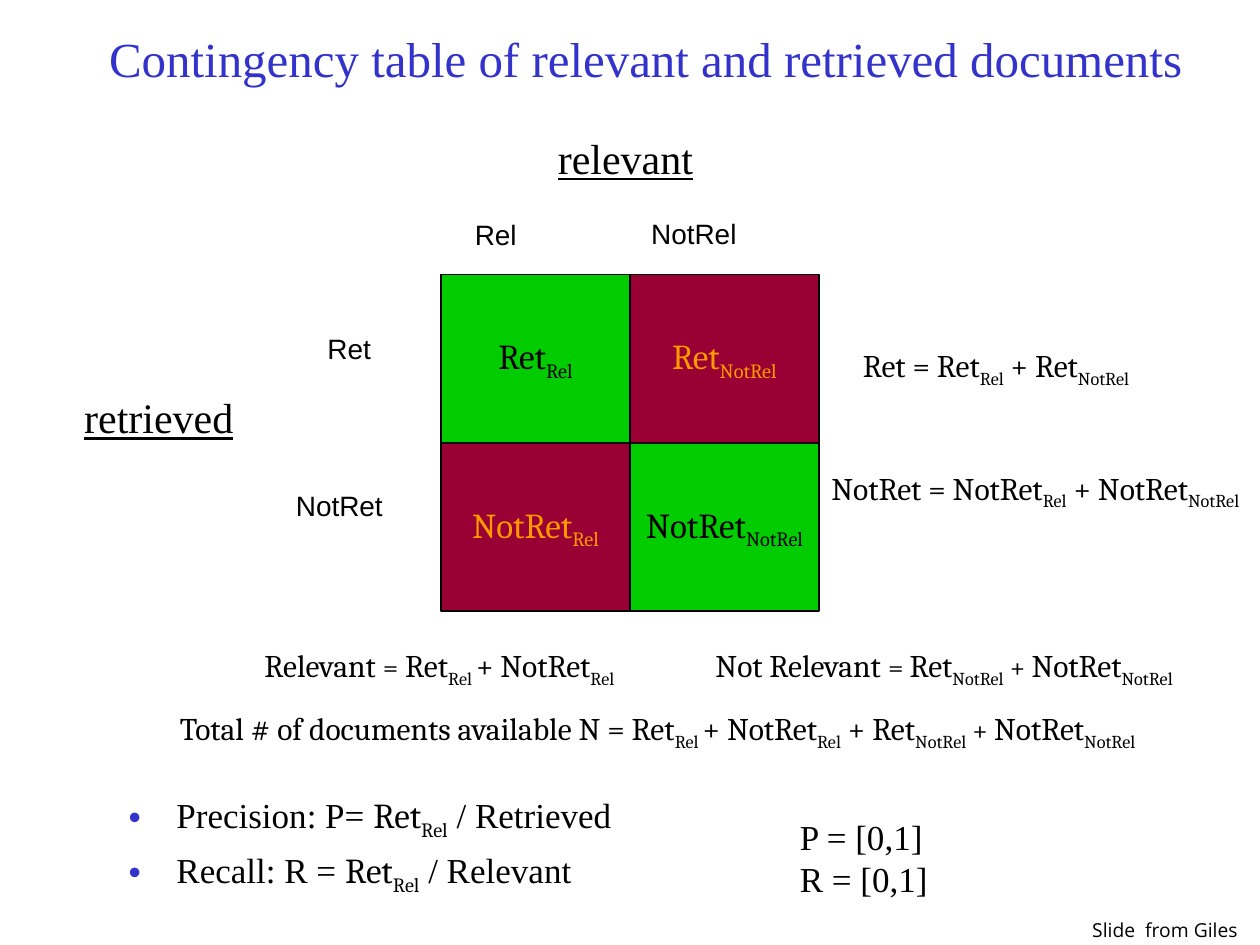
from lxml import etree
from pptx import Presentation
from pptx.dml.color import RGBColor
from pptx.enum.shapes import MSO_SHAPE
from pptx.enum.text import MSO_ANCHOR, MSO_AUTO_SIZE, PP_ALIGN
from pptx.oxml.ns import qn
from pptx.util import Inches, Pt

RECT = MSO_SHAPE.RECTANGLE
MIDDLE, TOP = MSO_ANCHOR.MIDDLE, MSO_ANCHOR.TOP
CENTER, LEFT = PP_ALIGN.CENTER, PP_ALIGN.LEFT
GROW, FIXED = MSO_AUTO_SIZE.SHAPE_TO_FIT_TEXT, MSO_AUTO_SIZE.NONE

COLORS = {"title": "3333CC", "text": "000000", "match": "00CC00",
          "miss": "990033", "miss_text": "FF9900"}
SERIF, MATH, SANS, CREDIT = "Times New Roman", "Cambria", "Arial", "Open Sans"


def write(paragraph, parts, size, font, color="text", underline=None):
    """Add runs; a part is text or (text, own formats), "_" starts a subscript."""
    for part in parts:
        text, own = (part, {}) if isinstance(part, str) else part
        run = paragraph.add_run()
        run.text = text.removeprefix("_")
        formats = {"size": Pt(size), "name": font, "underline": underline, **own}
        for attribute, value in formats.items():
            setattr(run.font, attribute, value)
        run.font.color.rgb = RGBColor.from_string(COLORS[color])
        if text.startswith("_"):
            run.font._element.set("baseline", "-25000")


def add_label(box, lines, size, font, wrap=False, underline=None):
    frame = slide.shapes.add_textbox(*map(Inches, box)).text_frame
    frame.word_wrap = wrap
    frame.auto_size = GROW
    for i, parts in enumerate(lines):
        paragraph = frame.add_paragraph() if i else frame.paragraphs[0]
        write(paragraph, parts, size, font, underline=underline)


prs = Presentation()
prs.slide_width, prs.slide_height = Inches(10), Inches(7.5)
slide = prs.slides.add_slide(prs.slide_layouts[1])
title, measures = slide.placeholders

# Title and list placeholders
for holder, box, anchor in ((title, (0.75, 0, 8.75, 0.92), MIDDLE),
                            (measures, (0.92, 6.25, 6.67, 1.08), TOP)):
    holder.left, holder.top, holder.width, holder.height = map(Inches, box)
    holder.text_frame.vertical_anchor = anchor
    holder.text_frame.auto_size = FIXED
title_line = title.text_frame.paragraphs[0]
title_line.alignment = CENTER
write(title_line, ["Contingency table of relevant and retrieved documents"],
      28, SERIF, "title")

# Precision and recall
in_math = {"name": MATH}
for i, (start, end) in enumerate((("Precision: P= ", " / Retrieved"),
                                  ("Recall: R = ", " / Relevant"))):
    frame = measures.text_frame
    item = frame.add_paragraph() if i else frame.paragraphs[0]
    item.alignment = LEFT
    item.space_before = Pt(4)
    write(item, [start, ("Ret", in_math), ("_Rel", in_math), end], 20, SERIF)
    props = item._p.get_or_add_pPr()
    props.set("marL", str(Inches(0.38)))
    props.set("indent", str(Inches(-0.38)))
    bullet_color = etree.SubElement(props, qn("a:buClr"))
    etree.SubElement(bullet_color, qn("a:srgbClr"), val=COLORS["title"])
    etree.SubElement(props, qn("a:buChar"), char="•")

# Contingency grid: the diagonal holds the matches
cell_width, cell_height = 1.5, 1.335
for row, retrieved in enumerate(("Ret", "NotRet")):
    for column, relevant in enumerate(("_Rel", "_NotRel")):
        match = row == column
        cell = slide.shapes.add_shape(
            RECT, Inches(3.5 + column * cell_width),
            Inches(2.18 + row * cell_height), Inches(cell_width), Inches(cell_height))
        cell.shadow.inherit = False
        cell.fill.solid()
        cell.fill.fore_color.rgb = RGBColor.from_string(COLORS["match" if match else "miss"])
        cell.line.color.rgb = RGBColor.from_string(COLORS["text"])
        cell.line.width = Pt(0.75)
        cell.text_frame.word_wrap = False
        cell.text_frame.vertical_anchor = MIDDLE
        entry = cell.text_frame.paragraphs[0]
        entry.alignment = CENTER
        write(entry, [retrieved, relevant], 20, MATH, "text" if match else "miss_text")

# Axis names
for name, box in (("relevant", (4.33, 1, 1.27, 0.5)),
                  ("retrieved", (0.57, 3.06, 1.39, 0.5))):
    add_label(box, [[name]], 24, SERIF, underline=True)

# Row and column headings
for name, left, top, width in (("Rel", 3.67, 1.68, 0.53), ("NotRel", 5.07, 1.67, 0.88),
                               ("Ret", 2.5, 2.58, 0.55), ("NotRet", 2.25, 3.83, 0.89)):
    add_label((left, top, width, 0.37), [[name]], 16, SANS)

# Sums of rows, columns and the whole table
small = {"size": Pt(16)}
sums = (
    ((6.75, 2.67, 2.56, 0.43),
     ["Ret = Ret", "_Rel", " + Ret", "_NotRel", (" ", {"size": Pt(20)})]),
    ((6.5, 3.67, 3.61, 0.4), ["NotRet = NotRet", "_Rel", " + NotRet", "_NotRel"]),
    ((2, 5.08, 3.12, 0.4),
     ["Relevant ", ("=", small), " Ret", "_Rel ", "+ NotRet", "_Rel"]),
    ((5.58, 5.08, 4.04, 0.4),
     ["Not Relevant ", ("= ", small), "Ret", "_NotRel", (" + ", small),
      "NotRet", "_NotRel"]),
    ((1.33, 5.58, 8.12, 0.4),
     ["Total # of documents available N = Ret", "_Rel ", "+ NotRet", "_Rel",
      " + Ret", "_NotRel", (" + ", small), "NotRet", "_NotRel"]),
)
for box, parts in sums:
    add_label(box, [parts], 18, MATH)

# Value ranges and credit
add_label((6.25, 6.42, 1.83, 0.77), [["P = [0,1]"], ["R = [0,1]"]], 20, SERIF, wrap=True)
add_label((8.57, 7.24, 1.42, 0.29), [["Slide  from Giles"]], 11, CREDIT)

prs.save("out.pptx")
